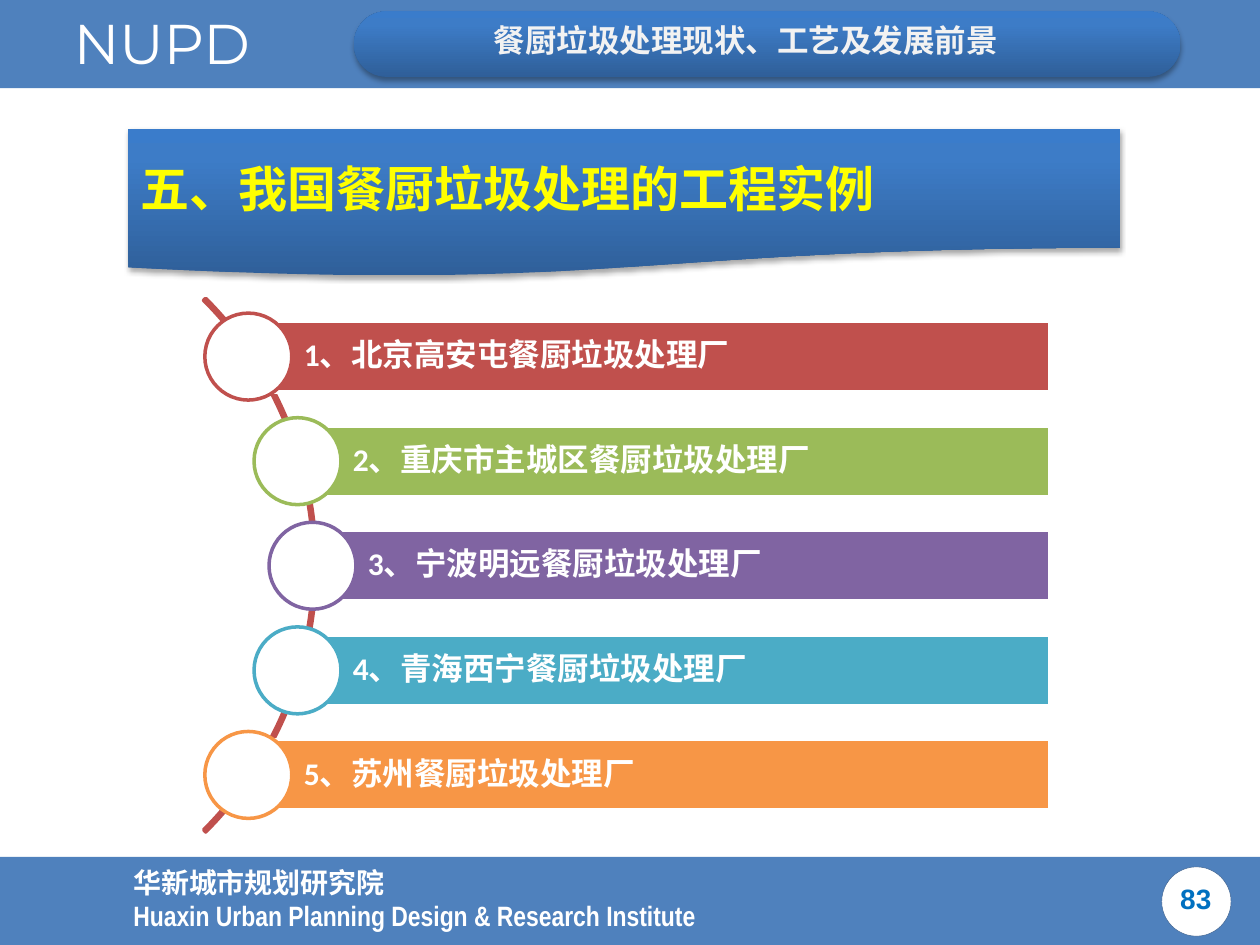
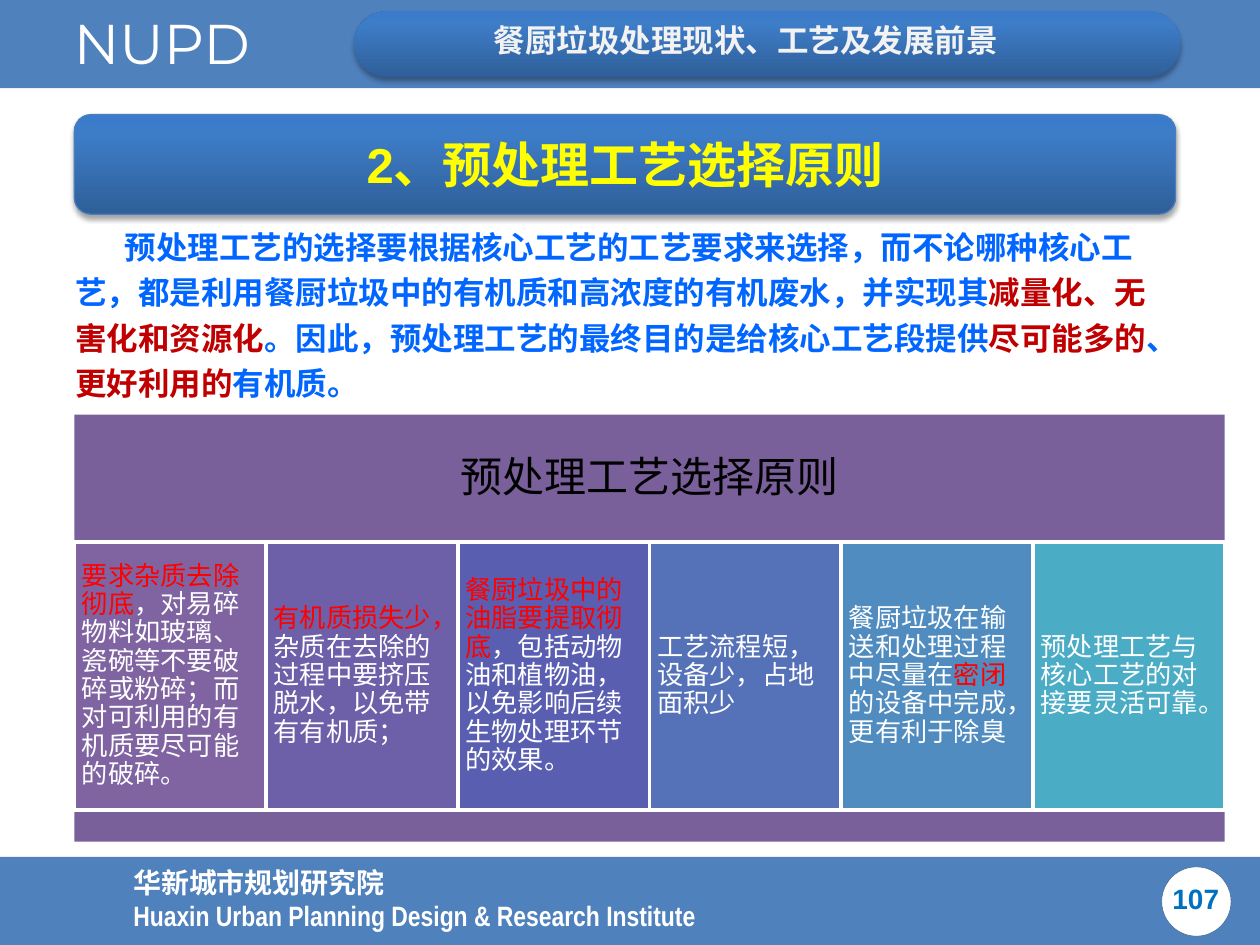
import copy
import math
from dataclasses import dataclass

import pptx
import pptx.dml.color
import pptx.enum.shapes
import pptx.enum.text
import pptx.oxml.ns
import pptx.util
from lxml import etree

Inches = pptx.util.Inches
Pt = pptx.util.Pt
Shape = pptx.enum.shapes.MSO_SHAPE
Align = pptx.enum.text.PP_ALIGN
Anchor = pptx.enum.text.MSO_ANCHOR
qn = pptx.oxml.ns.qn


@dataclass(frozen=True)
class Theme:
    # Colours
    band: str = "4F81BD"
    white: str = "FFFFFF"
    black: str = "000000"
    header: str = "F2F2F2"
    number: str = "0070C0"
    badge_line: str = "3A5F8C"
    title: str = "FFFF00"
    title_line: str = "4B7EBC"
    body: str = "0066FF"
    strong: str = "C00000"
    alert: str = "FF0000"
    frame: str = "7A609B"
    gradient: tuple = ((0, "2F5F99"), (0.8, "3D7CC7"), (1, "3A7CCB"))
    plants: tuple = ("C0504D", "9BBB59", "8064A2", "4BACC6", "F79646")
    principles: tuple = ("8064A2", "6E5FA9", "5A5EB1", "5572B8", "508CBF", "4BACC6")
    # Type
    cjk: str = "Noto Sans CJK SC"
    latin: str = "Arial"
    narrow: str = "Arial Narrow"
    list_font: str = "Calibri"
    mark_font: str = "Montserrat"
    mark_size: int = 32
    title_size: int = 28
    heading_size: int = 24
    body_size: int = 18
    footer_size: int = 16
    cell_size: int = 15


def rgb(value):
    return pptx.dml.color.RGBColor.from_string(value)


def set_values(target, values):
    for name, value in values.items():
        setattr(target, name, value)


class Builder:
    def __init__(self, theme):
        self.theme = theme
        self.deck = pptx.Presentation()
        set_values(self.deck, {"slide_width": Inches(10), "slide_height": Inches(7.5)})
        self.page = None

    def shape(self, kind, at, fill=None, line=None, adjust=()):
        """Preset shape; line is a (colour, points) pair."""
        shape = self.page.shapes.add_shape(kind, *map(Inches, at))
        shape.shadow.inherit = False
        for index, value in enumerate(adjust):
            shape.adjustments[index] = value
        if fill:
            shape.fill.solid()
            shape.fill.fore_color.rgb = rgb(fill)
        else:
            shape.fill.background()
        if line:
            shape.line.color.rgb = rgb(line[0])
            shape.line.width = Pt(line[1])
        else:
            shape.line.fill.background()
        return shape

    def glossy(self, kind, at, line=None, adjust=()):
        """Shape with the blue gradient and a soft shadow below it."""
        shape = self.shape(kind, at, line=line, adjust=adjust)
        shape.fill.gradient()
        shape.fill.gradient_angle = 90
        properties = shape._element.spPr
        stops = properties.find(".//" + qn("a:gsLst"))
        stops.append(copy.deepcopy(stops[0]))
        for stop, (position, colour) in zip(shape.fill.gradient_stops, self.theme.gradient):
            stop.position = position
            stop.color.rgb = rgb(colour)
        shadow = etree.SubElement(
            properties.find(qn("a:effectLst")), qn("a:outerShdw"),
            blurRad=str(Pt(3.1)), dist=str(Pt(1.8)), dir="5400000", rotWithShape="0")
        colour = etree.SubElement(shadow, qn("a:srgbClr"), val=self.theme.black)
        etree.SubElement(colour, qn("a:alpha"), val="35000")
        return shape

    def textbox(self, at, lines, **style):
        box = self.page.shapes.add_textbox(*map(Inches, at))
        self.set_text(box, lines, anchor=Anchor.TOP, **style)

    def set_text(self, shape, lines, size, colour, font=None, bold=False, align=Align.LEFT,
                 anchor=Anchor.MIDDLE, insets=(0.1, 0.05, 0.1, 0.05), spacing=None, indent=0):
        """Each line is a list of (text, overrides) spans."""
        frame = shape.text_frame
        sides = ("margin_left", "margin_top", "margin_right", "margin_bottom")
        set_values(frame, {"word_wrap": True, "vertical_anchor": anchor,
                           **dict(zip(sides, map(Inches, insets)))})
        for number, spans in enumerate(lines):
            para = frame.add_paragraph() if number else frame.paragraphs[0]
            set_values(para, {"alignment": align, "line_spacing": spacing})
            if indent:
                para._p.get_or_add_pPr().set("indent", str(Inches(indent)))
            for text, changes in spans:
                span = para.add_run()
                span.text = text
                set_values(span.font, {"name": changes.get("font", font or self.theme.cjk),
                                       "size": Pt(size), "bold": bold})
                span.font.color.rgb = rgb(changes.get("colour", colour))
                etree.SubElement(span._r.get_or_add_rPr(), qn("a:ea"),
                                 typeface=self.theme.cjk)

    def start_page(self, number):
        """New page with the header, footer and number badge."""
        theme = self.theme
        self.page = self.deck.slides.add_slide(self.deck.slide_layouts[6])
        for top in (6.8, 0):
            self.shape(Shape.RECTANGLE, (0, top, 10, 0.7), theme.band)
        self.textbox((0.39, 0.02, 1.79, 0.64), [[("NUPD", {})]], size=theme.mark_size,
                     colour=theme.white, font=theme.mark_font, align=Align.CENTER)
        self.shape(Shape.OVAL, (9.22, 6.88, 0.55, 0.55), theme.white, (theme.badge_line, 0.25))
        self.glossy(Shape.ROUNDED_RECTANGLE, (2.81, 0.09, 6.56, 0.52), adjust=(0.5,))
        footer = self.shape(Shape.RECTANGLE, (0.96, 6.9, 7.9, 0.47), theme.band)
        self.set_text(footer, [[("华新城市规划研究院", {})],
                               [("Huaxin Urban Planning Design & Research Institute",
                                 {"font": theme.narrow})]],
                      size=theme.footer_size, colour=theme.white, bold=True)
        self.textbox((3.82, 0.12, 4.33, 0.4), [[("餐厨垃圾处理现状、工艺及发展前景", {})]],
                     size=theme.body_size, colour=theme.header, bold=True,
                     align=Align.JUSTIFY)
        self.textbox((8.98, 6.95, 1.02, 0.4), [[(str(number), {})]], size=theme.footer_size,
                     colour=theme.number, font=theme.latin, bold=True, align=Align.CENTER)

    def title(self, kind, at, text, align=Align.LEFT, line=None):
        self.set_text(self.glossy(kind, at, line), [[(text, {})]], size=self.theme.title_size,
                      colour=self.theme.title, font=self.theme.latin, bold=True, align=align)


def plants_page(builder):
    theme = builder.theme
    builder.start_page(83)
    builder.title(Shape.FLOWCHART_DOCUMENT, (1.02, 1.02, 7.87, 1.18),
                  "五、我国餐厨垃圾处理的工程实例")

    # Curve that carries the circles
    builder.shape(Shape.BLOCK_ARC, (-3.48, 1.49, 5.99, 5.99),
                  line=(theme.plants[0], 2), adjust=(189, 27, 0.004))

    # One bar and circle per plant, centred on the curve
    plants = ("北京高安屯餐厨垃圾处理厂", "重庆市主城区餐厨垃圾处理厂", "宁波明远餐厨垃圾处理厂",
              "青海西宁餐厨垃圾处理厂", "苏州餐厨垃圾处理厂")
    centre_x, centre_y, radius, pitch = -0.48, 4.49, 2.96, 0.83
    bar_height, circle, right = 0.56, 0.69, 8.33
    for index, (plant, colour) in enumerate(zip(plants, theme.plants)):
        offset = (index - 2) * pitch
        left = centre_x + math.sqrt(radius ** 2 - offset ** 2)
        middle = centre_y + offset
        bar = builder.shape(Shape.RECTANGLE,
                            (left, middle - bar_height / 2, right - left, bar_height),
                            colour, (theme.white, 2))
        builder.set_text(bar, [[(f"{index + 1}、{plant}", {})]], size=theme.body_size,
                         colour=theme.white, font=theme.list_font, bold=True,
                         insets=(0.44, 0.05, 0.05, 0.05), spacing=0.9)
        builder.shape(Shape.OVAL, (left - circle / 2, middle - circle / 2, circle, circle),
                      theme.white, (colour, 2))


def principles_page(builder):
    theme = builder.theme
    strong, alert = {"colour": theme.strong}, {"colour": theme.alert}
    builder.start_page(107)
    builder.title(Shape.ROUNDED_RECTANGLE, (0.59, 0.91, 8.74, 0.79), "2、预处理工艺选择原则",
                  Align.CENTER, (theme.title_line, 0.75))

    # Introduction
    builder.textbox((0.5, 1.7, 8.83, 1.55), [[
        ("预处理工艺的选择要根据核心工艺的工艺要求来选择，而不论哪种核心工艺，"
         "都是利用餐厨垃圾中的有机质和高浓度的有机废水，并实现其", {}),
        ("减量化、无害化和资源化", strong),
        ("。因此，预处理工艺的最终目的是给核心工艺段提供", {}),
        ("尽可能多的", strong), ("、", {}), ("更好利用的", strong), ("有机质。", {}),
    ]], size=theme.body_size, colour=theme.body, font=theme.latin, bold=True,
        spacing=1.2, indent=0.39)

    # Heading above the columns, strip below them
    left, width = 0.59, 9.13
    heading = builder.shape(Shape.RECTANGLE, (left, 3.29, width, 1.02), theme.frame)
    builder.set_text(heading, [[("预处理工艺选择原则", {})]], size=theme.heading_size,
                     colour=theme.black, align=Align.CENTER, insets=(0.1,) * 4, spacing=0.9)
    builder.shape(Shape.RECTANGLE, (left, 6.44, width, 0.24), theme.frame)

    # One column per principle
    principles = (
        [("要求杂质去除彻底", alert),
         ("，对易碎物料如玻璃、瓷碗等不要破碎或粉碎；而对可利用的有机质要尽可能的破碎。", {})],
        [("有机质损失少，", alert), ("杂质在去除的过程中要挤压脱水，以免带有有机质；", {})],
        [("餐厨垃圾中的油脂要提取彻底", alert),
         ("，包括动物油和植物油，以免影响后续生物处理环节的效果。", {})],
        [("工艺流程短，设备少，占地面积少", {})],
        [("餐厨垃圾在输送和处理过程中尽量在", {}), ("密闭", alert),
         ("的设备中完成，更有利于除臭", {})],
        [("预处理工艺与核心工艺的对接要灵活可靠。", {})],
    )
    column = width / len(principles)
    for index, (spans, colour) in enumerate(zip(principles, theme.principles)):
        cell = builder.shape(Shape.RECTANGLE, (left + index * column, 4.3, column, 2.13),
                             colour, (theme.white, 2))
        builder.set_text(cell, [spans], size=theme.cell_size, colour=theme.white,
                         insets=(0.06,) * 4, spacing=0.9)


def main():
    builder = Builder(Theme())
    plants_page(builder)
    principles_page(builder)
    builder.deck.save("out.pptx")


if __name__ == "__main__":
    main()
